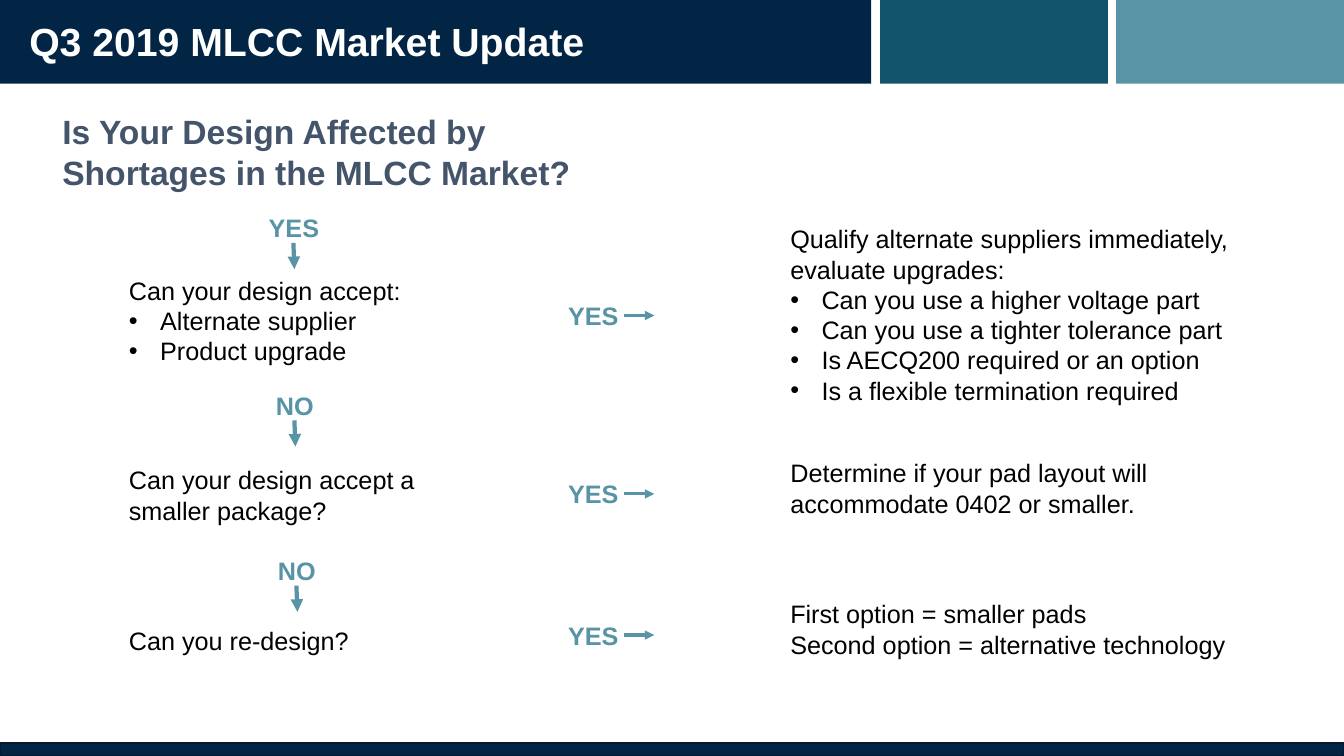
from dataclasses import dataclass

from lxml import etree
from pptx import Presentation, util as u
from pptx.dml.color import RGBColor
from pptx.enum import shapes, text
from pptx.oxml.ns import qn

COLORS = {
    "navy": "032545",
    "edge": "021B33",
    "teal": "11546C",
    "sky": "5894A5",
    "slate": "44546A",
    "black": "000000",
    "white": "FFFFFF",
}
FONT = "Arial"
BULLET = "• "
BULLET_INDENT = 0.31
LABEL_SIZE = (1.53, 0.4)
QUESTION_LEFT, ACTION_LEFT, YES_LEFT = 1.18, 7.74, 5.12


@dataclass(frozen=True)
class Band:
    left: float
    top: float
    width: float
    height: float
    fill: str
    edge: str = ""


@dataclass(frozen=True)
class Block:
    left: float
    top: float
    width: float
    height: float
    lines: tuple[str, ...]


@dataclass(frozen=True)
class ArrowStyle:
    """Arrow ends relative to the label's top left corner."""
    start: tuple[float, float]
    end: tuple[float, float]
    weight: float


@dataclass(frozen=True)
class Branch:
    left: float
    top: float
    answer: str
    arrow: ArrowStyle


DOWN = ArrowStyle((0.76, 0.35), (0.77, 0.61), 3)
ACROSS = ArrowStyle((1.07, 0.2), (1.37, 0.2), 2.25)

BANDS = (
    Band(11.07, 0, 2.26, 0.83, "sky"),
    Band(0, 0, 8.64, 0.83, "navy"),
    Band(8.73, 0, 2.26, 0.83, "teal"),
    Band(0, 7.37, 13.33, 0.13, "navy", "edge"),
)

BLOCKS = (
    Block(QUESTION_LEFT, 2.68, 3.49, 1.01, (
        "Can your design accept:",
        "• Alternate supplier",
        "• Product upgrade",
    )),
    Block(QUESTION_LEFT, 4.56, 3.49, 0.71, ("Can your design accept a smaller package?",)),
    Block(QUESTION_LEFT, 6.15, 3.49, 0.4, ("Can you re-design?",)),
    Block(ACTION_LEFT, 2.17, 5.2, 1.92, (
        "Qualify alternate suppliers immediately, evaluate upgrades:",
        "• Can you use a higher voltage part",
        "• Can you use a tighter tolerance part",
        "• Is AECQ200 required or an option",
        "• Is a flexible termination required",
    )),
    Block(ACTION_LEFT, 4.49, 3.75, 0.71, (
        "Determine if your pad layout will accommodate 0402 or smaller.",
    )),
    Block(ACTION_LEFT, 5.89, 4.67, 0.71, (
        "First option = smaller pads",
        "Second option = alternative technology",
    )),
)

BRANCHES = (
    Branch(2.15, 2.06, "YES", DOWN),
    Branch(2.16, 3.82, "NO", DOWN),
    Branch(2.18, 5.46, "NO", DOWN),
    *(Branch(YES_LEFT, top, "YES", ACROSS) for top in (2.93, 4.7, 6.1)),
)


def color(name: str) -> RGBColor:
    return RGBColor.from_string(COLORS[name])


def inches(*lengths: float) -> list[u.Length]:
    return [u.Inches(length) for length in lengths]


def assign(target, values: dict) -> None:
    for name, value in values.items():
        setattr(target, name, value)


def write(box, lines: tuple[str, ...], size: float, ink: str, bold: bool = False,
          middle: bool = False, grow: bool = True, paragraph_format: dict | None = None) -> None:
    frame = box.text_frame
    assign(frame, {
        "word_wrap": True,
        "auto_size": text.MSO_AUTO_SIZE.SHAPE_TO_FIT_TEXT if grow else text.MSO_AUTO_SIZE.NONE,
        "vertical_anchor": text.MSO_ANCHOR.MIDDLE if middle else text.MSO_ANCHOR.TOP,
    })
    for index, line in enumerate(lines):
        para = frame.add_paragraph() if index else frame.paragraphs[0]
        assign(para, paragraph_format or {})
        if line.startswith(BULLET):
            add_bullet(para)
        span = para.add_run()
        span.text = line.removeprefix(BULLET)
        assign(span.font, {"name": FONT, "size": u.Pt(size), "bold": bold})
        span.font.color.rgb = color(ink)


def add_bullet(para) -> None:
    properties = para._p.get_or_add_pPr()
    indent = u.Inches(BULLET_INDENT)
    properties.set("marL", str(indent))
    properties.set("indent", str(-indent))
    etree.SubElement(properties, qn("a:buFont")).set("typeface", FONT)
    etree.SubElement(properties, qn("a:buChar")).set("char", BULLET.strip())


def draw_band(page, band: Band) -> None:
    bar = page.shapes.add_shape(shapes.MSO_SHAPE.RECTANGLE,
                                *inches(band.left, band.top, band.width, band.height))
    bar.shadow.inherit = False
    bar.fill.solid()
    bar.fill.fore_color.rgb = color(band.fill)
    if band.edge:
        bar.line.color.rgb = color(band.edge)
        bar.line.width = u.Pt(1)
    else:
        bar.line.fill.background()


def draw_block(page, block: Block) -> None:
    box = page.shapes.add_textbox(*inches(block.left, block.top, block.width, block.height))
    write(box, block.lines, 18, "black")


def draw_branch(page, branch: Branch) -> None:
    group = page.shapes.add_group_shape()
    label = group.shapes.add_textbox(*inches(branch.left, branch.top, *LABEL_SIZE))
    write(label, (branch.answer,), 18, "sky", bold=True, middle=True,
          paragraph_format={"alignment": text.PP_ALIGN.CENTER})
    ends = [(branch.left + x, branch.top + y) for x, y in (branch.arrow.start, branch.arrow.end)]
    arrow = group.shapes.add_connector(shapes.MSO_CONNECTOR.STRAIGHT, *inches(*ends[0], *ends[1]))
    arrow.line.color.rgb = color("sky")
    arrow.line.width = u.Pt(branch.arrow.weight)
    properties = arrow._element.spPr
    etree.SubElement(properties.find(qn("a:ln")), qn("a:tailEnd")).set("type", "triangle")
    etree.SubElement(properties, qn("a:effectLst"))


def main() -> None:
    deck = Presentation()
    deck.slide_width, deck.slide_height = inches(13.33, 7.5)
    page = deck.slides.add_slide(deck.slide_layouts[5])

    # Header and footer bands, kept behind the title
    for band in BANDS:
        draw_band(page, band)

    # Title and leading question
    title = page.shapes.title
    page.shapes._spTree.append(title._element)
    assign(title, dict(zip(("left", "top", "width", "height"), inches(0.19, 0.17, 7.85, 0.53))))
    write(title, ("Q3 2019 MLCC Market Update",), 28, "white", bold=True, middle=True, grow=False,
          paragraph_format={"alignment": text.PP_ALIGN.LEFT, "line_spacing": 0.9})
    heading = page.shapes.add_textbox(*inches(0.52, 0.87, 5.24, 1.27))
    write(heading, ("Is Your Design Affected by Shortages in the MLCC Market?",), 24, "slate",
          bold=True, middle=True, grow=False)

    # Questions, actions and the branches between them
    for block in BLOCKS:
        draw_block(page, block)
    for branch in BRANCHES:
        draw_branch(page, branch)

    deck.save("out.pptx")


if __name__ == "__main__":
    main()
